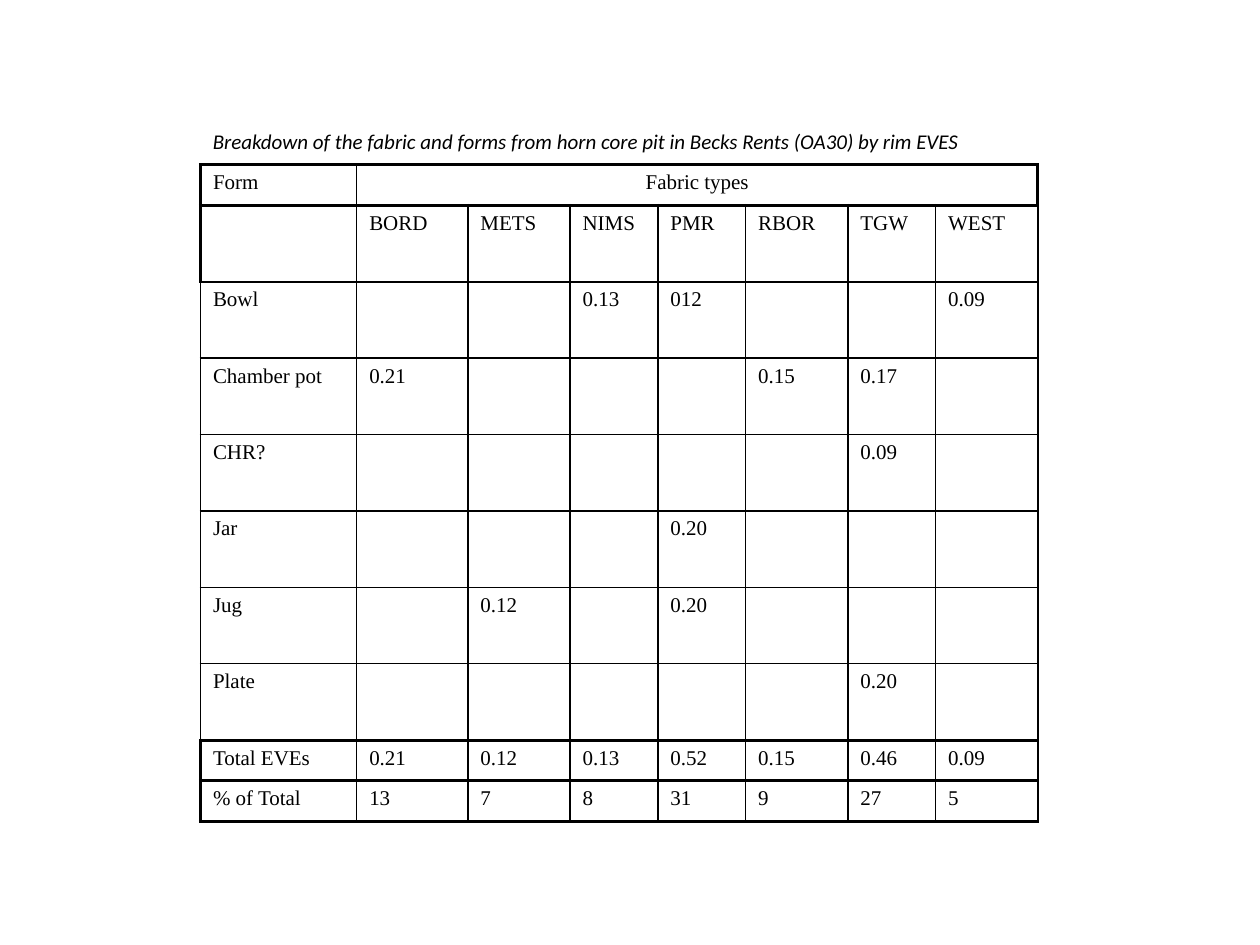
from typing import Any, NamedTuple

from lxml.etree import SubElement
from pptx import Presentation
from pptx.dml.color import RGBColor
from pptx.enum.text import MSO_ANCHOR, PP_ALIGN
from pptx.oxml.ns import qn
from pptx.util import Cm, Pt

BLACK = "000000"
CAPTION = "Breakdown of the fabric and forms from horn core pit in Becks Rents (OA30) by rim EVES"
FABRICS = ["BORD", "METS", "NIMS", "PMR", "RBOR", "TGW", "WEST"]
COLUMN_WIDTHS = [3.15, 2.24, 2.06, 1.77, 1.77, 2.06, 1.77, 2.06]
SHORT_ROW, TALL_ROW = 0.82, 1.54
THIN, THICK = 1, 2
THICK_RULES = {0, 1, 8, 9, 10}
THICK_LEFT_ROWS = {0, 1, 8, 9}
CAPTION_FONT = {"name": "Calibri", "size": Pt(12), "italic": True}
TABLE_FONT = {"name": "Times New Roman", "size": Pt(12)}


class FormRow(NamedTuple):
    label: str
    values: dict[str, str]
    height: float = TALL_ROW

    def texts(self) -> list[str]:
        return [self.label] + [self.values.get(fabric, "") for fabric in FABRICS]


def totals(label: str, *values: str) -> FormRow:
    return FormRow(label, dict(zip(FABRICS, values)), SHORT_ROW)


ROWS = [
    FormRow("Form", {FABRICS[0]: "Fabric types"}, SHORT_ROW),
    FormRow("", {fabric: fabric for fabric in FABRICS}),
    FormRow("Bowl", {"NIMS": "0.13", "PMR": "012", "WEST": "0.09"}),
    FormRow("Chamber pot", {"BORD": "0.21", "RBOR": "0.15", "TGW": "0.17"}),
    FormRow("CHR?", {"TGW": "0.09"}),
    FormRow("Jar", {"PMR": "0.20"}),
    FormRow("Jug", {"METS": "0.12", "PMR": "0.20"}),
    FormRow("Plate", {"TGW": "0.20"}),
    totals("Total EVEs", "0.21", "0.12", "0.13", "0.52", "0.15", "0.46", "0.09"),
    totals("% of Total", "13", "7", "8", "31", "9", "27", "5"),
]


def color(value: str) -> RGBColor:
    return RGBColor.from_string(value)


def set_attributes(target: Any, values: dict[str, Any]) -> None:
    for name, value in values.items():
        setattr(target, name, value)


def write_text(paragraph: Any, text: str, font: dict[str, Any], alignment: PP_ALIGN) -> None:
    paragraph.alignment = alignment
    if text:
        run = paragraph.add_run()
        run.text = text
        set_attributes(run.font, font)
        run.font.color.rgb = color(BLACK)
    else:
        ending = SubElement(paragraph._p, qn("a:endParaRPr"))
        ending.set("sz", str(int(font["size"].pt * 100)))


def draw_caption(slide: Any) -> None:
    shape = slide.shapes.add_textbox(Cm(4.04), Cm(2.46), Cm(17.32), Cm(1.78))
    set_attributes(shape.text_frame, {"word_wrap": True, "vertical_anchor": MSO_ANCHOR.TOP})
    write_text(shape.text_frame.paragraphs[0], CAPTION, CAPTION_FONT, PP_ALIGN.LEFT)


def border_widths(row: int, column: int) -> dict[str, int]:
    thick = {
        "lnL": column == 0 and row in THICK_LEFT_ROWS,
        "lnR": row == 0 and column > 0,
        "lnT": row in THICK_RULES,
        "lnB": row + 1 in THICK_RULES,
    }
    return {side: THICK if is_thick else THIN for side, is_thick in thick.items()}


def draw_borders(cell: Any, widths: dict[str, int]) -> None:
    properties = cell._tc.get_or_add_tcPr()
    for side, width in widths.items():
        line = SubElement(properties, qn(f"a:{side}"), w=str(Pt(width)))
        fill = SubElement(line, qn("a:solidFill"))
        SubElement(fill, qn("a:srgbClr"), val=BLACK)


def draw_table(slide: Any) -> None:
    heights = [row.height for row in ROWS]
    shape = slide.shapes.add_table(
        len(ROWS), len(COLUMN_WIDTHS), Cm(4.04), Cm(3.32),
        Cm(sum(COLUMN_WIDTHS)), Cm(sum(heights)),
    )
    table = shape.table
    set_attributes(table, {"first_row": False, "horz_banding": False})
    for column, width in zip(table.columns, COLUMN_WIDTHS):
        column.width = Cm(width)
    for row_index, form_row in enumerate(ROWS):
        table.rows[row_index].height = Cm(form_row.height)
        for column_index, text in enumerate(form_row.texts()):
            cell = table.cell(row_index, column_index)
            centred = row_index == 0 and column_index > 0
            alignment = PP_ALIGN.CENTER if centred else PP_ALIGN.JUSTIFY
            write_text(cell.text_frame.paragraphs[0], text, TABLE_FONT, alignment)
            draw_borders(cell, border_widths(row_index, column_index))
            cell.fill.background()
    table.cell(0, 1).merge(table.cell(0, len(FABRICS)))


def main() -> None:
    presentation = Presentation()
    set_attributes(presentation, {"slide_width": Cm(25.4), "slide_height": Cm(19.05)})
    slide = presentation.slides.add_slide(presentation.slide_layouts[6])
    draw_caption(slide)
    draw_table(slide)
    presentation.save("out.pptx")


if __name__ == "__main__":
    main()
